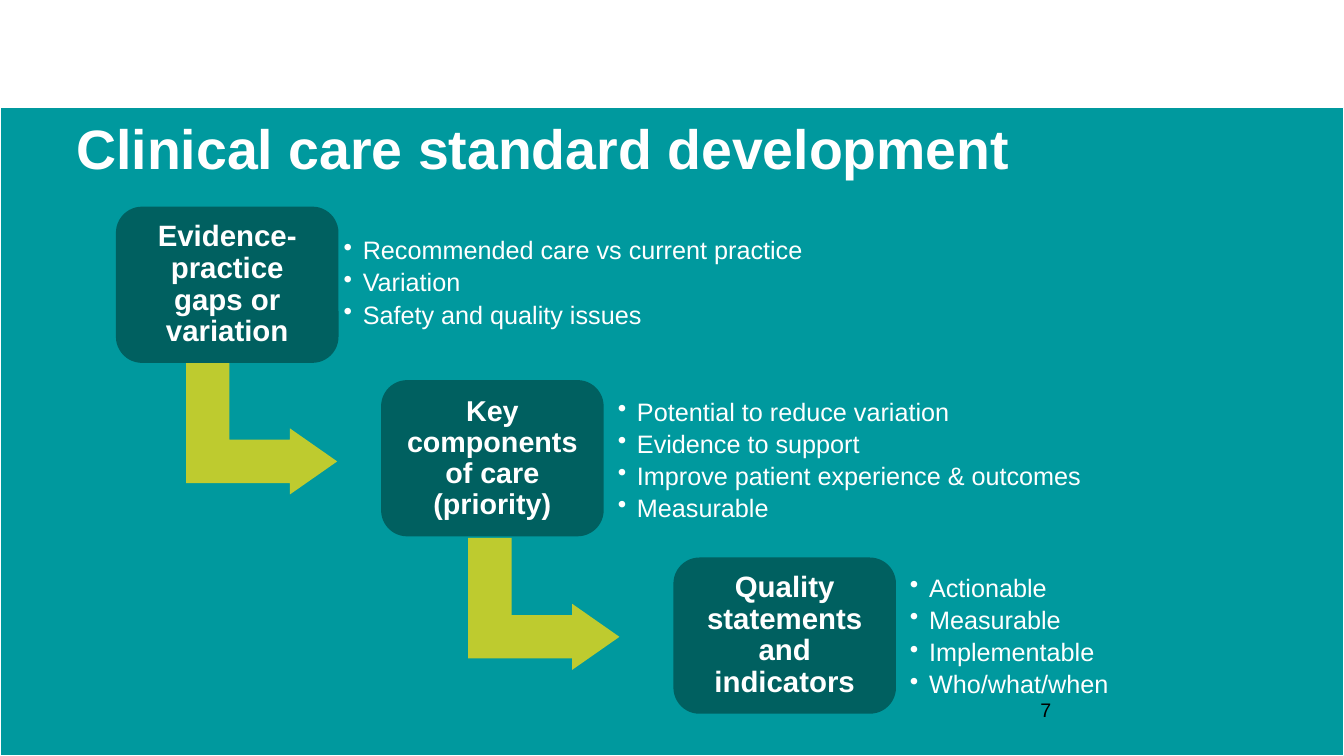
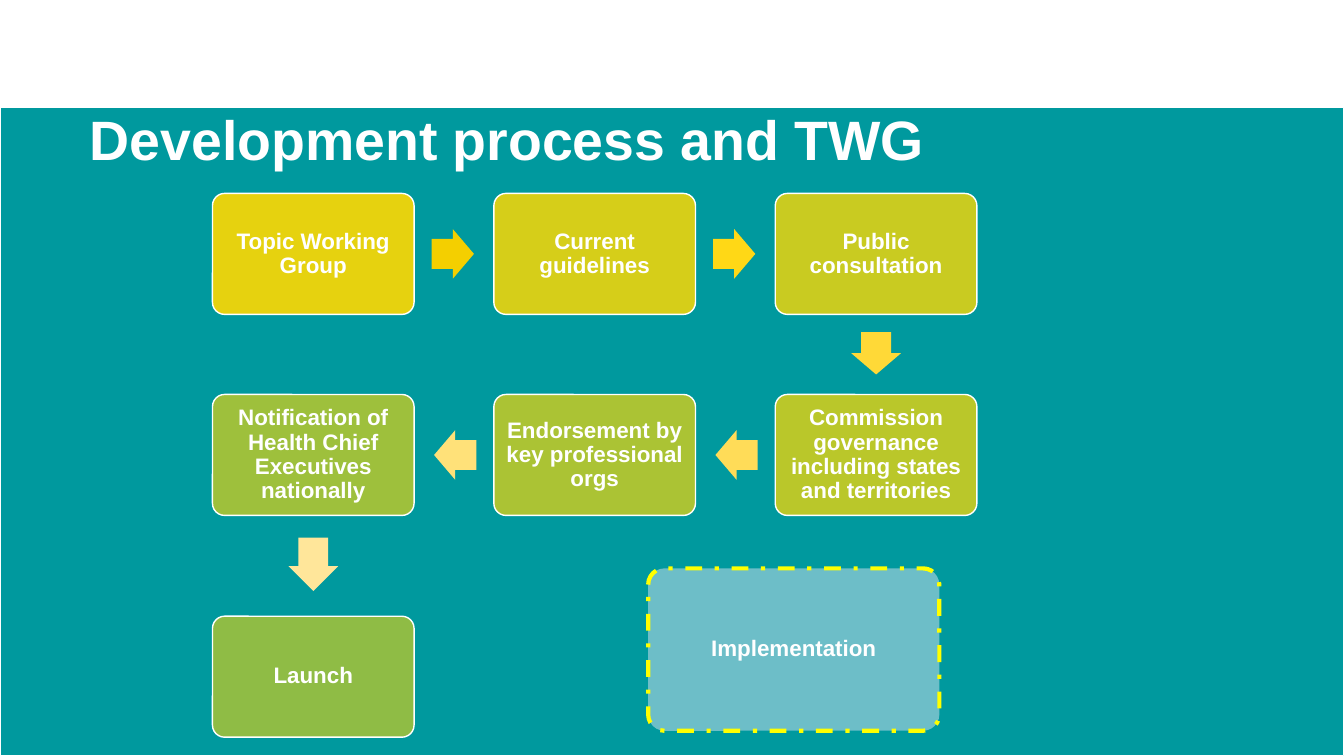
from dataclasses import dataclass
from itertools import pairwise
from math import atan2, degrees, hypot

from lxml.etree import SubElement
from pptx import Presentation
from pptx.dml.color import RGBColor
from pptx.enum.dml import MSO_LINE_DASH_STYLE as Dash
from pptx.enum.shapes import MSO_SHAPE as Preset
from pptx.enum.text import MSO_ANCHOR as Anchor, PP_ALIGN as Align
from pptx.oxml.ns import qn
from pptx.util import Pt

FONT = "Arial"
COLORS = {
    "white": "FFFFFF",
    "black": "000000",
    "teal": "00999E",
    "dark_teal": "006060",
    "lime": "BECB2F",
    "gold": "FFD900",
    "pale_blue": "DAE3F3",
    "yellow": "FFFF00",
}
ARROW_COLORS = ["F4CF00", "FFD816", "FFD937", "FFDC58", "FFE179", "FFE69A"]


@dataclass(frozen=True)
class Box:
    left: float
    top: float
    width: float
    height: float

    @property
    def center(self) -> tuple[float, float]:
        return self.left + self.width / 2, self.top + self.height / 2

    def lengths(self) -> list[Pt]:
        return [Pt(value) for value in (self.left, self.top, self.width, self.height)]


@dataclass(frozen=True)
class TextStyle:
    size: float
    color: str = COLORS["white"]
    bold: bool = False
    align: Align = Align.LEFT
    line_spacing: float = 0.9
    space_after: float = 0
    bullet_indent: float = 0


@dataclass(frozen=True)
class Step:
    label: str
    size: float
    left: float
    top: float
    points: list[str]
    list_box: Box


@dataclass(frozen=True)
class Stage:
    label: str
    column: int
    row: int


TITLE = TextStyle(39.6, bold=True)
BULLETS = TextStyle(18, space_after=3.5, bullet_indent=13.7)
STAGE_TEXT = TextStyle(16, bold=True, align=Align.CENTER)
NUMBER = TextStyle(14, COLORS["black"], line_spacing=1)

STEP_WIDTH, STEP_HEIGHT = 159, 111.6
STEPS = [
    Step("Evidence-practice gaps or variation", 21, 82.8, 147.6,
         ["Recommended care vs current practice", "Variation",
          "Safety and quality issues"],
         Box(240.5, 157.7, 415, 90)),
    Step("Key components of care\v(priority)", 20.5, 272.2, 271.5,
         ["Potential to reduce variation", "Evidence to support",
          "Improve patient experience & outcomes", "Measurable"],
         Box(436.3, 284.4, 395, 90)),
    Step("Quality statements and indicators", 21, 481, 398.2,
         ["Actionable", "Measurable", "Implementable", "Who/what/when"],
         Box(645, 410.4, 199, 90)),
]
STEP_ARROWS = [Box(139.7, 252, 94.3, 108), Box(341.3, 377.3, 94.3, 108)]

STAGE_WIDTH, STAGE_HEIGHT = 144, 86.4
STAGE_LEFT, STAGE_PITCH = 151.8, 201
STAGE_TOPS = [138.2, 281.8, 440.2]
STAGES = [
    Stage("Topic Working Group", 0, 0),
    Stage("Current guidelines", 1, 0),
    Stage("Public consultation", 2, 0),
    Stage("Commission governance including states and territories", 2, 1),
    Stage("Endorsement by key professional orgs", 1, 1),
    Stage("Notification of Health Chief Executives nationally", 0, 1),
    Stage("Launch", 0, 2),
]


def set_text(shape, lines: list[str], style: TextStyle, inset: float,
             anchor: Anchor = Anchor.MIDDLE) -> None:
    frame = shape.text_frame
    frame.word_wrap = True
    frame.vertical_anchor = anchor
    frame.margin_left = frame.margin_right = Pt(inset)
    frame.margin_top = frame.margin_bottom = Pt(min(inset, 6.5))
    for index, line in enumerate(lines):
        paragraph = frame.add_paragraph() if index else frame.paragraphs[0]
        paragraph.text = line
        paragraph.alignment = style.align
        paragraph.line_spacing = style.line_spacing
        paragraph.space_after = Pt(style.space_after)
        if style.bullet_indent:
            properties = paragraph._p.get_or_add_pPr()
            properties.set("marL", str(Pt(style.bullet_indent)))
            properties.set("indent", str(-Pt(style.bullet_indent)))
            SubElement(properties, qn("a:buChar")).set("char", "•")
        font = paragraph.font
        font.name, font.size, font.bold = FONT, Pt(style.size), style.bold
        font.color.rgb = RGBColor.from_string(style.color)


def add_text(slide, box: Box, lines: list[str], style: TextStyle,
             inset: float, anchor: Anchor = Anchor.MIDDLE) -> None:
    set_text(slide.shapes.add_textbox(*box.lengths()), lines, style, inset, anchor)


def add_preset(slide, preset: Preset, box: Box, fill: str,
               adjustments: tuple[float, ...] = (), opacity: float = 100,
               line: str = "", line_width: float = 0, rotation: float = 0):
    shape = slide.shapes.add_shape(preset, *box.lengths())
    shape.shadow.inherit = False
    shape.rotation = rotation
    for index, value in enumerate(adjustments):
        shape.adjustments[index] = value
    shape.fill.solid()
    shape.fill.fore_color.rgb = RGBColor.from_string(fill)
    if opacity < 100:
        color = shape._element.spPr.find(qn("a:solidFill")).find(qn("a:srgbClr"))
        SubElement(color, qn("a:alpha")).set("val", str(round(opacity * 1000)))
    if line:
        shape.line.color.rgb = RGBColor.from_string(line)
        shape.line.width = Pt(line_width)
    else:
        shape.line.fill.background()
    return shape


def add_base_slide(presentation, title: str, left: float, top: float):
    """Blank slide with the teal band and the title."""
    slide = presentation.slides.add_slide(presentation.slide_layouts[6])
    add_preset(slide, Preset.RECTANGLE, Box(0, 77, 960, 463), COLORS["teal"],
               line=COLORS["white"])
    add_text(slide, Box(left, top, 837, 36.7), [title], TITLE, 7.2)
    return slide


def add_stage_arrow(slide, source: Box, target: Box, color: str) -> None:
    """Arrow that starts at 22% of the gap and fills 53% of it."""
    (x1, y1), (x2, y2) = source.center, target.center
    dx, dy = x2 - x1, y2 - y1
    distance = hypot(dx, dy)
    side = STAGE_WIDTH if dx else STAGE_HEIGHT
    gap = distance - side
    length, thickness = 0.53 * gap, 35.5
    share = (side / 2 + 0.22 * gap + length / 2) / distance
    box = Box(x1 + dx * share - length / 2, y1 + dy * share - thickness / 2,
              length, thickness)
    add_preset(slide, Preset.RIGHT_ARROW, box, color, (0.6, 0.5),
               rotation=degrees(atan2(dy, dx)))


def build_standard_slide(presentation) -> None:
    slide = add_base_slide(presentation, "Clinical care standard development", 47.5, 90)
    add_text(slide, Box(736, 492, 224, 36), ["7"], NUMBER, 7.2, Anchor.TOP)
    # Bent arrows lie behind the steps
    for box in STEP_ARROWS:
        add_preset(slide, Preset.BENT_UP_ARROW, box, COLORS["lime"],
                   (0.328, 0.25, 0.358), rotation=90)
    # Steps with their bullet lists
    for step in STEPS:
        shape = add_preset(slide, Preset.ROUNDED_RECTANGLE,
                           Box(step.left, step.top, STEP_WIDTH, STEP_HEIGHT),
                           COLORS["dark_teal"], (0.167,))
        set_text(shape, [step.label],
                 TextStyle(step.size, bold=True, align=Align.CENTER), 6.5)
        add_text(slide, step.list_box, step.points, BULLETS, 5)


def build_process_slide(presentation) -> None:
    slide = add_base_slide(presentation, "Development process and TWG", 57, 83.5)
    # Stages fade evenly from first to last
    boxes = [Box(STAGE_LEFT + stage.column * STAGE_PITCH, STAGE_TOPS[stage.row],
                 STAGE_WIDTH, STAGE_HEIGHT) for stage in STAGES]
    for index, (stage, box) in enumerate(zip(STAGES, boxes)):
        shape = add_preset(slide, Preset.ROUNDED_RECTANGLE, box, COLORS["gold"], (0.1,),
                           opacity=90 - index * 34 / (len(STAGES) - 1),
                           line=COLORS["white"], line_width=1)
        set_text(shape, [stage.label], STAGE_TEXT, 5)
    # Arrows between neighbouring stages
    for (source, target), color in zip(pairwise(boxes), ARROW_COLORS):
        add_stage_arrow(slide, source, target, color)
    # Separate implementation box
    shape = add_preset(slide, Preset.ROUNDED_RECTANGLE, Box(463, 406, 208, 116),
                       COLORS["pale_blue"], (0.1,), opacity=50,
                       line=COLORS["yellow"], line_width=3)
    shape.line.dash_style = Dash.DASH_DOT
    set_text(shape, ["Implementation"], STAGE_TEXT, 5)


def main() -> None:
    presentation = Presentation()
    presentation.slide_width, presentation.slide_height = Pt(960), Pt(540)
    build_standard_slide(presentation)
    build_process_slide(presentation)
    presentation.save("out.pptx")


if __name__ == "__main__":
    main()
